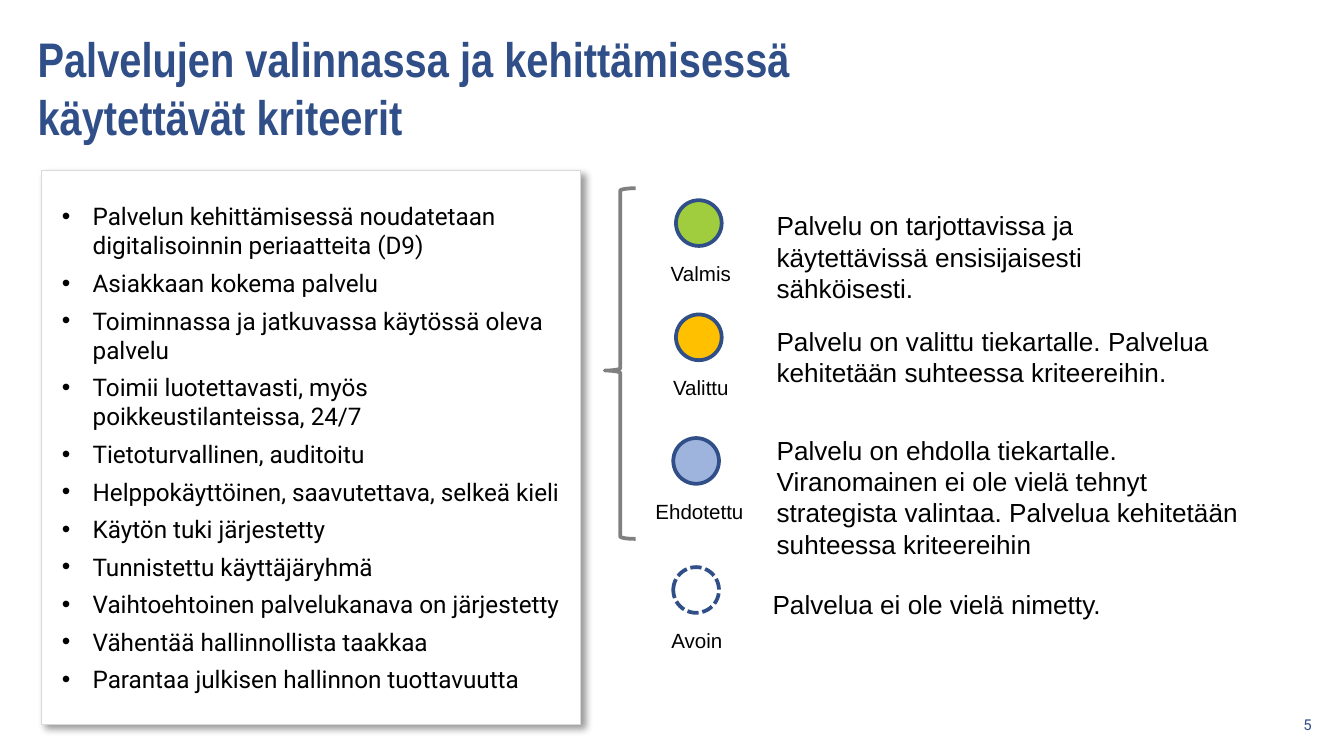
import pptx
import pptx.util
import pptx.dml.color
import pptx.enum.dml
import pptx.enum.shapes
import pptx.enum.text
import pptx.oxml
import pptx.oxml.ns

Inches, Pt = pptx.util.Inches, pptx.util.Pt
RGB = pptx.dml.color.RGBColor
SHAPE = pptx.enum.shapes.MSO_SHAPE
ALIGN = pptx.enum.text.PP_ALIGN
MIDDLE = pptx.enum.text.MSO_ANCHOR.MIDDLE

NAVY = RGB(0x30, 0x4E, 0x88)
BLACK = RGB(0, 0, 0)
WHITE = RGB(0xFF, 0xFF, 0xFF)
GREY = RGB(0x80, 0x80, 0x80)
PALE_GREY = RGB(0xD9, 0xD9, 0xD9)
GREEN = RGB(0xA0, 0xCD, 0x3D)
AMBER = RGB(0xFF, 0xC0, 0x00)
LIGHT_BLUE = RGB(0x9F, 0xB4, 0xDD)

TITLE = "Palvelujen valinnassa ja kehittämisessä käytettävät kriteerit"
CRITERIA = [
    "Palvelun kehittämisessä noudatetaan digitalisoinnin periaatteita (D9)",
    "Asiakkaan kokema palvelu",
    "Toiminnassa ja jatkuvassa käytössä oleva palvelu",
    "Toimii luotettavasti, myös poikkeustilanteissa, 24/7",
    "Tietoturvallinen, auditoitu",
    "Helppokäyttöinen, saavutettava, selkeä kieli",
    "Käytön tuki järjestetty",
    "Tunnistettu käyttäjäryhmä",
    "Vaihtoehtoinen palvelukanava on järjestetty",
    "Vähentää hallinnollista taakkaa",
    "Parantaa julkisen hallinnon tuottavuutta",
]
# label, label left, fill, dashed outline, (circle left, top),
# description, description box
STATUSES = [
    ("Valmis", 4.71, GREEN, False, (5.03, 1.49),
     "Palvelu on tarjottavissa ja käytettävissä ensisijaisesti sähköisesti.",
     (5.68, 1.51, 3.47, 0.82)),
    ("Valittu", 4.71, AMBER, False, (5.03, 2.34),
     "Palvelu on valittu tiekartalle. Palvelua kehitetään suhteessa kriteereihin.",
     (5.68, 2.37, 3.47, 0.57)),
    ("Ehdotettu", 4.7, LIGHT_BLUE, False, (5.01, 3.26),
     "Palvelu on ehdolla tiekartalle. Viranomainen ei ole vielä tehnyt "
     "strategista valintaa. Palvelua kehitetään suhteessa kriteereihin",
     (5.68, 3.18, 3.88, 1.06)),
    ("Avoin", 4.68, WHITE, True, (5.01, 4.22),
     "Palvelua ei ole vielä nimetty.",
     (5.65, 4.33, 2.73, 0.34)),
]
CIRCLE = 0.34
LABEL_W, LABEL_H, LABEL_DROP = 1.01, 0.29, 0.4
SHADOW = (
    '<a:effectLst %s><a:outerShdw blurRad="50800" dist="38100" dir="2700000" '
    'algn="tl" rotWithShape="0"><a:srgbClr val="000000"><a:alpha val="40000"/>'
    '</a:srgbClr></a:outerShdw></a:effectLst>' % pptx.oxml.ns.nsdecls("a"))


def style(p, size, font, color=BLACK, bold=False):
    for r in p.runs:
        r.font.size, r.font.name, r.font.bold = Pt(size), font, bold
        r.font.color.rgb = color


def set_insets(tf, left, top, right, bottom):
    tf.margin_left, tf.margin_top = Inches(left), Inches(top)
    tf.margin_right, tf.margin_bottom = Inches(right), Inches(bottom)


def add_text(s, box, text, size, font="Arial", color=BLACK, bold=False,
             align=ALIGN.LEFT, wrap=True):
    tf = s.shapes.add_textbox(*map(Inches, box)).text_frame
    tf.word_wrap = wrap
    tf.text = text
    tf.paragraphs[0].alignment = align
    style(tf.paragraphs[0], size, font, color, bold)
    return tf


def add_outlined(s, kind, box, fill, line, width):
    sp = s.shapes.add_shape(kind, *map(Inches, box))
    sp.shadow.inherit = False
    if fill is None:
        sp.fill.background()
    else:
        sp.fill.solid()
        sp.fill.fore_color.rgb = fill
    sp.line.color.rgb = line
    sp.line.width = Pt(width)
    return sp


def add_bullet(p, indent):
    pPr = p._p.get_or_add_pPr()
    pPr.set("marL", str(Inches(indent)))
    pPr.set("indent", str(-Inches(indent)))
    for xml in ('<a:buFont %s typeface="Arial"/>', '<a:buChar %s char="•"/>'):
        pPr.append(pptx.oxml.parse_xml(xml % pptx.oxml.ns.nsdecls("a")))


def add_criteria_card(s):
    card = add_outlined(s, SHAPE.RECTANGLE, (0.31, 1.27, 4.01, 4.12),
                        WHITE, PALE_GREY, 0.75)
    spPr = card._element.spPr
    spPr.remove(spPr.find(pptx.oxml.ns.qn("a:effectLst")))
    spPr.append(pptx.oxml.parse_xml(SHADOW))
    tf = card.text_frame
    tf.word_wrap = True
    tf.vertical_anchor = MIDDLE
    set_insets(tf, 0.15, 0.05, 0.1, 0.05)
    tf.text = "\n".join(CRITERIA)
    for p in tf.paragraphs:
        p.alignment = ALIGN.LEFT
        p.space_after = Pt(4.5)
        add_bullet(p, 0.23)
        style(p, 13, "Roboto")


def add_status(s, label, label_left, fill, dashed, corner, description, box):
    left, top = corner
    circle = add_outlined(s, SHAPE.OVAL, (left, top, CIRCLE, CIRCLE), fill, NAVY, 2)
    if dashed:
        circle.line.dash_style = pptx.enum.dml.MSO_LINE.SQUARE_DOT
    add_text(s, (label_left, top + LABEL_DROP, LABEL_W, LABEL_H), label, 11,
             align=ALIGN.CENTER)
    add_text(s, box, description, 14)


prs = pptx.Presentation()
prs.slide_width = Inches(10)
prs.slide_height = prs.slide_width * 9 // 16
s = prs.slides.add_slide(prs.slide_layouts[6])

title = add_text(s, (0.23, 0.01, 7.27, 1.28), TITLE, 26, "Arial Narrow", NAVY, True)
number = add_text(s, (9.64, 5.27, 0.17, 0.24), "5", 8, "Roboto", NAVY,
                  align=ALIGN.RIGHT, wrap=False)
for tf in (title, number):
    tf.vertical_anchor = MIDDLE
    set_insets(tf, 0.05, 0.05, 0.05, 0.05)

add_criteria_card(s)

brace = add_outlined(s, SHAPE.RIGHT_BRACE, (4.5, 1.4, 0.23, 2.61), None, GREY, 2)
brace.adjustments[0], brace.adjustments[1] = 0.08, 0.48
brace.rotation = 180

for status in STATUSES:
    add_status(s, *status)

prs.save("out.pptx")
